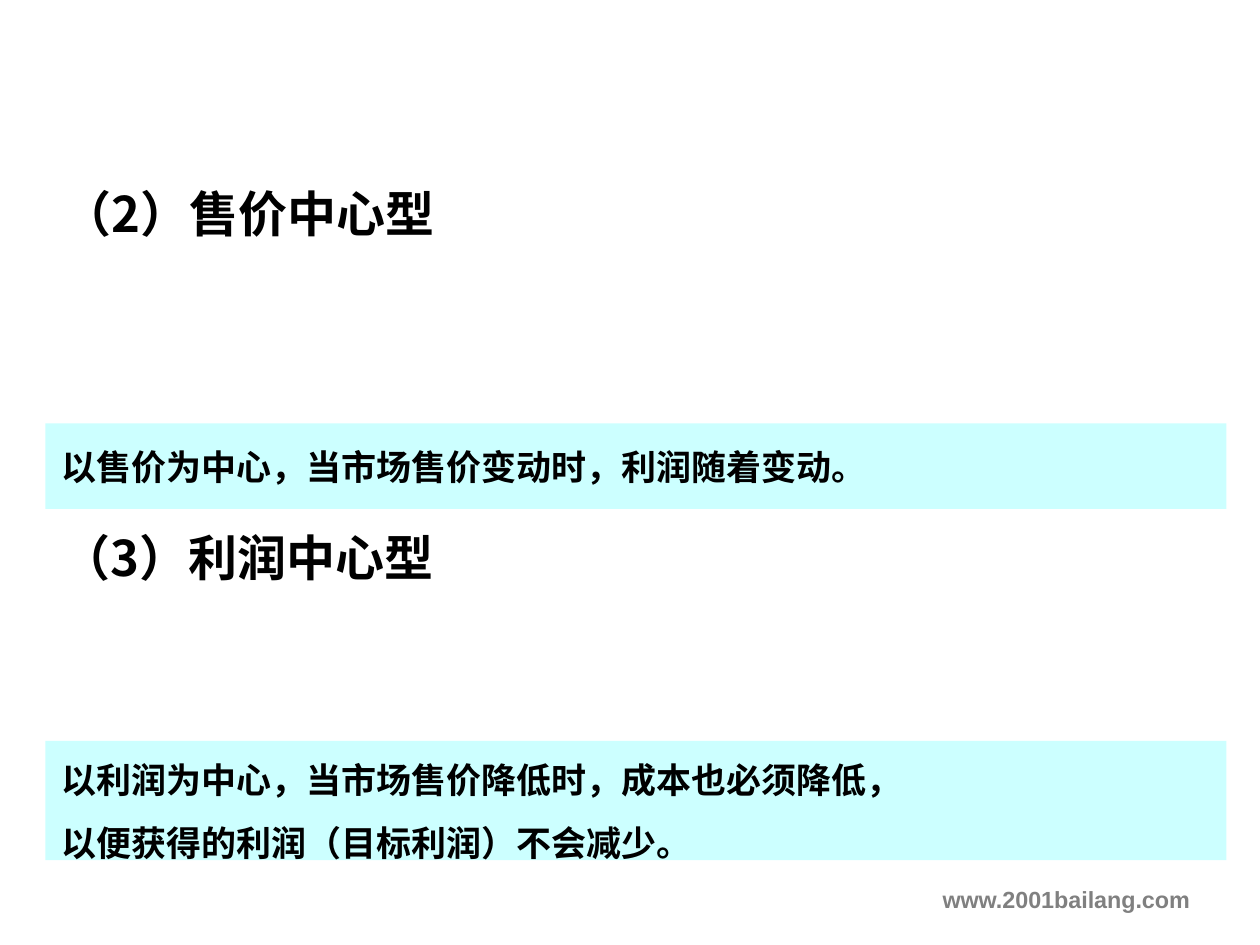
from dataclasses import dataclass

from lxml.etree import SubElement
from pptx import Presentation
from pptx.dml.color import RGBColor
from pptx.enum.shapes import MSO_SHAPE
from pptx.enum.text import MSO_ANCHOR, MSO_AUTO_SIZE, PP_ALIGN
from pptx.oxml.ns import qn
from pptx.util import Inches, Pt

CHINESE_FONT = "Noto Sans CJK SC"
LEFT = 0.27


@dataclass
class Area:
    top: float
    width: float
    height: float
    left: float = LEFT


@dataclass
class Panel:
    area: Area
    lines: list[str]
    spacing: float = 1.0


PANELS = [
    Panel(Area(2.52, 7.03, 0.51), ["以售价为中心，当市场售价变动时，利润随着变动。"]),
    Panel(
        Area(4.41, 7.03, 0.71),
        [
            "以利润为中心，当市场售价降低时，成本也必须降低，",
            "以便获得的利润（目标利润）不会减少。",
        ],
        spacing=1.5,
    ),
]


def color(value: str) -> RGBColor:
    return RGBColor.from_string(value)


def bounds(area: Area) -> list[int]:
    return [Inches(length) for length in (area.left, area.top, area.width, area.height)]


def write(box, lines: list[str], size: float, *, font: str = CHINESE_FONT,
          fill: str = "000000", align=PP_ALIGN.LEFT, anchor=MSO_ANCHOR.MIDDLE,
          spacing: float = 1.0, wrap: bool = True) -> None:
    """Fill a shape with bold paragraphs."""
    frame = box.text_frame
    frame.word_wrap = wrap
    frame.auto_size = MSO_AUTO_SIZE.NONE
    frame.vertical_anchor = anchor
    for index, line in enumerate(lines):
        para = frame.add_paragraph() if index else frame.paragraphs[0]
        para.alignment = align
        para.line_spacing = spacing
        para.space_before = Pt(0)
        span = para.add_run()
        span.text = line
        span.font.size = Pt(size)
        span.font.bold = True
        span.font.color.rgb = color(fill)
        span.font.name = font
        SubElement(span.font._element, qn("a:ea"), typeface=font)


def add_panel(page, panel: Panel) -> None:
    box = page.shapes.add_shape(MSO_SHAPE.RECTANGLE, *bounds(panel.area))
    box.shadow.inherit = False
    box.fill.solid()
    box.fill.fore_color.rgb = color("CCFFFF")
    box.line.fill.background()
    write(box, panel.lines, 15, spacing=panel.spacing, wrap=False)


def main() -> None:
    deck = Presentation()
    deck.slide_width = Inches(7.5)
    deck.slide_height = deck.slide_width * 3 // 4
    page = deck.slides.add_slide(deck.slide_layouts[5])

    title = page.shapes.title
    title.left, title.top, title.width, title.height = bounds(Area(1.03, 6.75, 0.48))
    write(title, ["（2）售价中心型"], 21)

    heading = page.shapes.add_textbox(*bounds(Area(3.09, 6.91, 0.45)))
    write(heading, ["（3）利润中心型"], 21, anchor=MSO_ANCHOR.TOP)

    for panel in PANELS:
        add_panel(page, panel)

    address = page.shapes.add_textbox(*bounds(Area(5.22, 7.18, 0.26, left=0)))
    write(address, ["www.2001bailang.com"], 10, font="Arial", fill="808080",
          align=PP_ALIGN.RIGHT, anchor=MSO_ANCHOR.TOP)

    deck.save("out.pptx")


if __name__ == "__main__":
    main()
